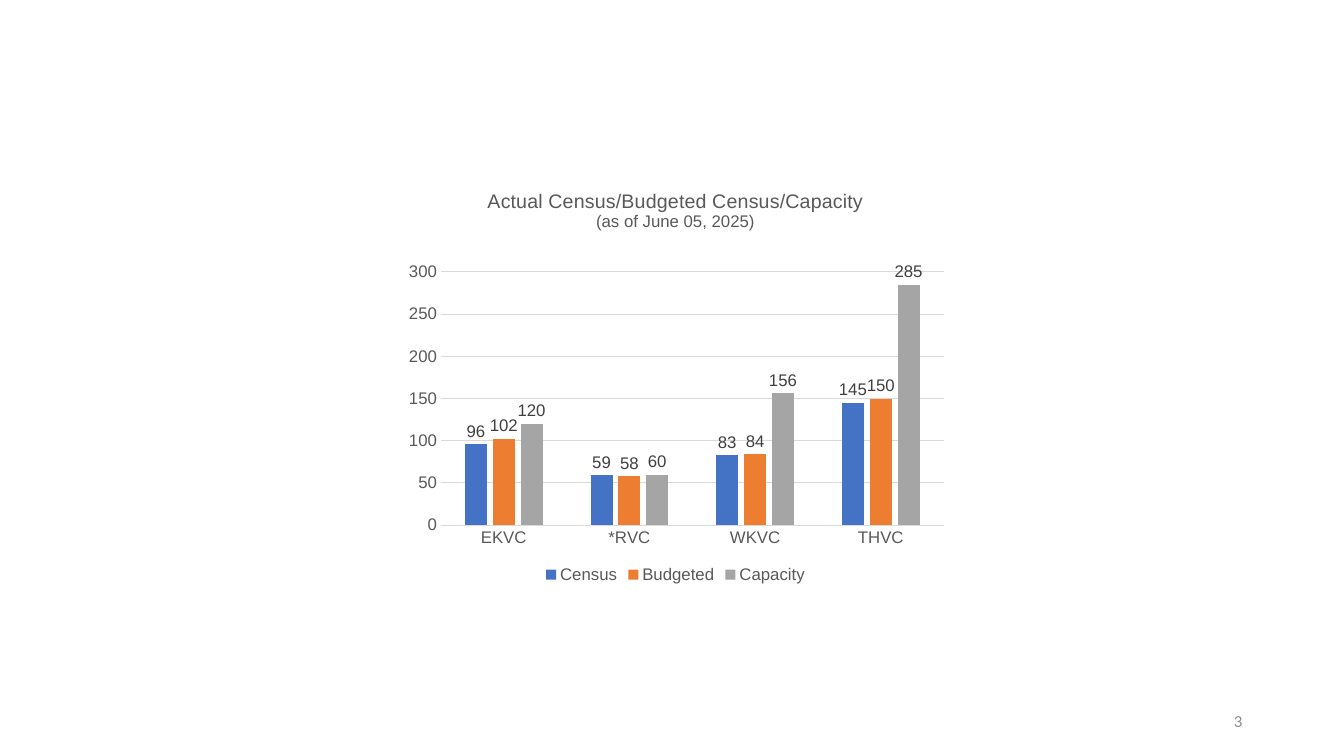
"""Build the census, budget and capacity chart slide."""
from dataclasses import dataclass

from lxml import etree
from pptx import Presentation
from pptx.chart.data import CategoryChartData
from pptx.dml.color import RGBColor
from pptx.enum.chart import XL_CHART_TYPE, XL_LABEL_POSITION, XL_LEGEND_POSITION, XL_TICK_MARK
from pptx.enum.text import MSO_ANCHOR, PP_ALIGN
from pptx.oxml.ns import qn
from pptx.util import Inches, Pt

CLUSTERED = XL_CHART_TYPE.COLUMN_CLUSTERED
OUTSIDE_END = XL_LABEL_POSITION.OUTSIDE_END
BOTTOM = XL_LEGEND_POSITION.BOTTOM
NO_TICK = XL_TICK_MARK.NONE
MIDDLE = MSO_ANCHOR.MIDDLE
RIGHT = PP_ALIGN.RIGHT
BLANK_LAYOUT = 6


@dataclass(frozen=True)
class Theme:
    chart_font: str = "Arial"
    number_font: str = "Calibri"
    body_size: int = 12
    title_size: int = 14
    text: str = "595959"
    label: str = "404040"
    grid: str = "D9D9D9"
    number: str = "8C8C8C"
    series: tuple = ("4472C4", "ED7D31", "A5A5A5")


def set_attributes(target, values):
    for name, value in values.items():
        setattr(target, name, value)


class SlideBuilder:
    def __init__(self, slide, theme):
        self.slide = slide
        self.theme = theme

    def style_font(self, font, color, size=None, name=None):
        set_attributes(font, {
            "name": name or self.theme.chart_font,
            "size": Pt(size or self.theme.body_size),
            "bold": False,
        })
        font.color.rgb = RGBColor.from_string(color)

    def style_line(self, line):
        line.width = Pt(0.75)
        line.color.rgb = RGBColor.from_string(self.theme.grid)

    def add_page_number(self, text, box):
        shape = self.slide.shapes.add_textbox(*map(Inches, box))
        set_attributes(shape.text_frame, {"word_wrap": True, "vertical_anchor": MIDDLE})
        paragraph = shape.text_frame.paragraphs[0]
        set_attributes(paragraph, {"text": text, "alignment": RIGHT})
        self.style_font(paragraph.runs[0].font, self.theme.number, name=self.theme.number_font)

    def add_column_chart(self, box, title_lines, categories, series, plot_box):
        data = CategoryChartData()
        data.categories = categories
        for name, values in series.items():
            data.add_series(name, values)
        frame = self.slide.shapes.add_chart(CLUSTERED, *map(Inches, box), data)
        chart = frame.chart
        self.style_font(chart.font, self.theme.text)
        self.style_title(chart, title_lines)
        self.style_axes(chart)
        self.style_plot(chart.plots[0])
        chart.has_legend = True
        set_attributes(chart.legend, {"position": BOTTOM, "include_in_layout": False})
        self.style_font(chart.legend.font, self.theme.text)
        self.place_plot(chart, plot_box)

    def style_title(self, chart, lines):
        chart.has_title = True
        chart.chart_title.include_in_layout = False
        text_frame = chart.chart_title.text_frame
        text_frame.text = "\n".join(lines)
        sizes = (self.theme.title_size, self.theme.body_size)
        for paragraph, size in zip(text_frame.paragraphs, sizes):
            self.style_font(paragraph.runs[0].font, self.theme.text, size)

    def style_axes(self, chart):
        for axis in (chart.category_axis, chart.value_axis):
            set_attributes(axis, {"major_tick_mark": NO_TICK, "minor_tick_mark": NO_TICK})
            self.style_font(axis.tick_labels.font, self.theme.text)
        self.style_line(chart.category_axis.format.line)
        value_axis = chart.value_axis
        set_attributes(value_axis, {"minimum_scale": 0, "maximum_scale": 300, "major_unit": 50})
        value_axis.format.line.fill.background()
        self.style_line(value_axis.major_gridlines.format.line)

    def style_plot(self, plot):
        set_attributes(plot, {"gap_width": 219, "overlap": -27, "vary_by_categories": False})
        for series, color in zip(plot.series, self.theme.series):
            series.format.fill.solid()
            series.format.fill.fore_color.rgb = RGBColor.from_string(color)
            labels = series.data_labels
            set_attributes(labels, {"show_value": True, "position": OUTSIDE_END})
            self.style_font(labels.font, self.theme.label)

    def place_plot(self, chart, plot_box):
        plot_area = chart.element.find(".//" + qn("c:plotArea"))
        for layout in plot_area.findall(qn("c:layout")):
            plot_area.remove(layout)
        layout = etree.Element(qn("c:layout"))
        plot_area.insert(0, layout)
        manual = etree.SubElement(layout, qn("c:manualLayout"))
        settings = {"layoutTarget": "inner", "xMode": "edge", "yMode": "edge"}
        settings.update(zip("xywh", plot_box))
        for tag, value in settings.items():
            etree.SubElement(manual, qn(f"c:{tag}"), val=str(value))


def main():
    presentation = Presentation()
    set_attributes(presentation, {"slide_width": Inches(13.33), "slide_height": Inches(7.5)})
    slide = presentation.slides.add_slide(presentation.slide_layouts[BLANK_LAYOUT])
    builder = SlideBuilder(slide, Theme())
    builder.add_page_number("3", (9.42, 6.95, 3, 0.4))
    builder.add_column_chart(
        box=(3.93, 1.71, 5.54, 4.12),
        title_lines=("Actual Census/Budgeted Census/Capacity", "(as of June 05, 2025)"),
        categories=("EKVC", "*RVC", "WKVC", "THVC"),
        series={
            "Census": (96, 59, 83, 145),
            "Budgeted": (102, 58, 84, 150),
            "Capacity": (120, 60, 156, 285),
        },
        plot_box=(0.08, 0.24, 0.9, 0.61),
    )
    presentation.save("out.pptx")


if __name__ == "__main__":
    main()
